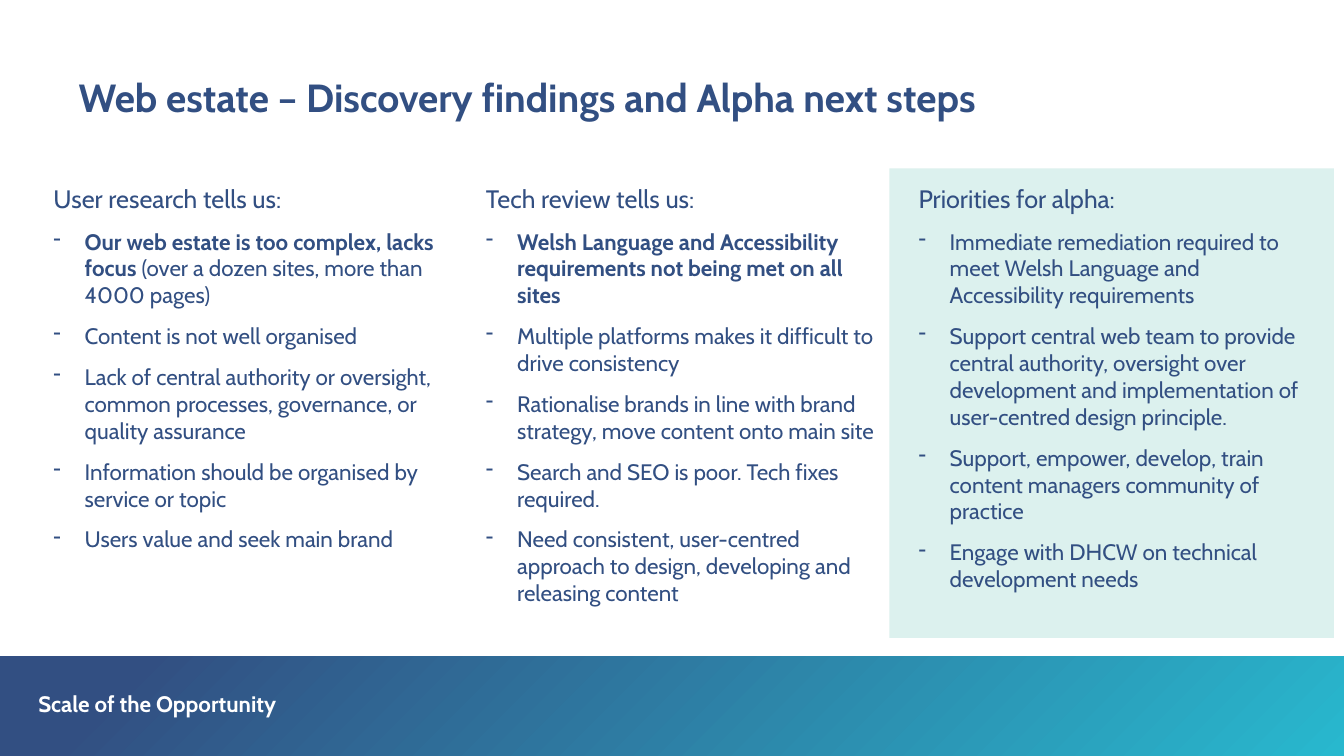
import pptx
import pptx.util
import pptx.dml.color
import pptx.enum.shapes
import pptx.oxml.ns
import lxml.etree

TITLE = "Web estate – Discovery findings and Alpha next steps"
FOOTER = "Scale of the Opportunity"
COLUMNS = [
    ("User research tells us:", [
        ("Our web estate is too complex, lacks focus ", "(over a dozen sites, more than 4000 pages)"),
        ("", "Content is not well organised"),
        ("", "Lack of central authority or oversight, common processes, governance, or quality assurance"),
        ("", "Information should be organised by service or topic"),
        ("", "Users value and seek main brand"),
    ]),
    ("Tech review tells us:", [
        ("Welsh Language and Accessibility requirements not being met on all sites", ""),
        ("", "Multiple platforms makes it difficult to drive consistency"),
        ("", "Rationalise brands in line with brand strategy, move content onto main site"),
        ("", "Search and SEO is poor. Tech fixes required."),
        ("", "Need consistent, user-centred approach to design, developing and releasing content"),
    ]),
    ("Priorities for alpha:", [
        ("", "Immediate remediation required to meet Welsh Language and Accessibility requirements"),
        ("", "Support central web team to provide central authority, oversight over development "
             "and implementation of user-centred design principle."),
        ("", "Support, empower, develop, train content managers community of practice"),
        ("", "Engage with DHCW on technical development needs"),
    ]),
]

FONT = "Cabin"
NAVY, CYAN, MINT, WHITE = "324F82", "28B8CE", "DCF1EE", "FFFFFF"
WIDTH, HEIGHT = 13.33, 7.5
BAND_TOP = 6.51
COLUMN_LEFT, COLUMN_TOP, COLUMN_STEP = 0.53, 1.82, 4.29
COLUMN_WIDTH, COLUMN_HEIGHT = 3.85, 4.5
INDENT = 0.31

inches = pptx.util.Inches


def colour(value):
    return pptx.dml.color.RGBColor.from_string(value)


def add_rectangle(page, left, top, width, height):
    shape = page.shapes.add_shape(
        pptx.enum.shapes.MSO_SHAPE.RECTANGLE,
        inches(left), inches(top), inches(width), inches(height))
    shape.shadow.inherit = False
    shape.line.fill.background()
    return shape


def add_text_frame(page, left, top, width, height):
    box = page.shapes.add_textbox(inches(left), inches(top), inches(width), inches(height))
    frame = box.text_frame
    frame.word_wrap = True
    frame.margin_left = frame.margin_top = frame.margin_right = frame.margin_bottom = 0
    return frame


def style(para, size, fill=NAVY, bold=None):
    para.font.name = FONT
    para.font.size = pptx.util.Pt(size)
    para.font.color.rgb = colour(fill)
    para.font.bold = bold


def add_line(page, text, place, size, fill):
    para = add_text_frame(page, *place).paragraphs[0]
    para.text = text
    para.line_spacing = 0.9
    style(para, size, fill, True)


def add_bullet(frame, strong, plain):
    para = frame.add_paragraph()
    properties = para._p.get_or_add_pPr()
    properties.set("marL", str(inches(INDENT)))
    properties.set("indent", str(-inches(INDENT)))
    para.space_before = pptx.util.Pt(10)
    bullet = lxml.etree.SubElement(properties, pptx.oxml.ns.qn("a:buChar"))
    bullet.set("char", "-")
    style(para, 16)
    for text, bold in ((strong, True), (plain, False)):
        if text:
            span = para.add_run()
            span.text = text
            span.font.bold = bold


def add_column(page, index, heading, points):
    frame = add_text_frame(page, COLUMN_LEFT + index * COLUMN_STEP, COLUMN_TOP,
                           COLUMN_WIDTH, COLUMN_HEIGHT)
    frame.paragraphs[0].text = heading
    style(frame.paragraphs[0], 18)
    for strong, plain in points:
        add_bullet(frame, strong, plain)


def main():
    deck = pptx.Presentation()
    deck.slide_width, deck.slide_height = inches(WIDTH), inches(HEIGHT)
    page = deck.slides.add_slide(deck.slide_layouts[6])

    band = add_rectangle(page, 0, BAND_TOP, WIDTH, HEIGHT - BAND_TOP)
    band.fill.gradient()
    band.fill.gradient_angle = 315
    for stop, (position, value) in zip(band.fill.gradient_stops, ((0.1, NAVY), (1, CYAN))):
        stop.position = position
        stop.color.rgb = colour(value)

    panel = add_rectangle(page, 8.82, 1.67, 4.41, 4.66)
    panel.fill.solid()
    panel.fill.fore_color.rgb = colour(MINT)

    add_line(page, TITLE, (0.78, 0.78, 11.77, 0.43), 28, NAVY)
    for index, (heading, points) in enumerate(COLUMNS):
        add_column(page, index, heading, points)
    add_line(page, FOOTER, (0.38, 6.88, 3.93, 0.24), 16, WHITE)

    deck.save("out.pptx")


if __name__ == "__main__":
    main()
